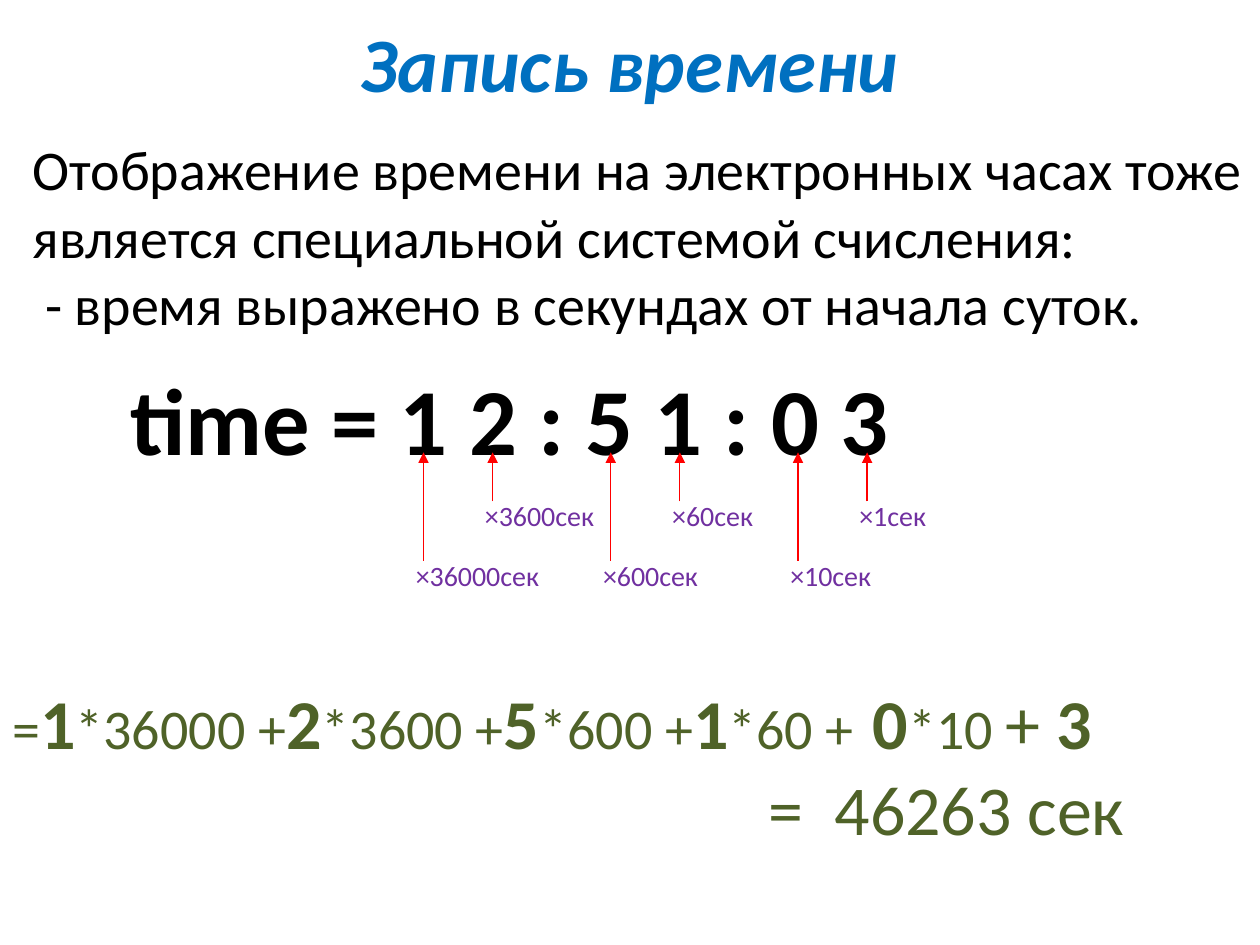
from lxml import etree
from pptx import Presentation
from pptx.dml.color import RGBColor
from pptx.enum.shapes import MSO_CONNECTOR
from pptx.enum.text import MSO_ANCHOR, PP_ALIGN
from pptx.oxml.ns import qn
from pptx.util import Pt

STRAIGHT = MSO_CONNECTOR.STRAIGHT
MIDDLE = MSO_ANCHOR.MIDDLE
CENTER = PP_ALIGN.CENTER

FONT = "Calibri"
BLUE = RGBColor(0x00, 0x70, 0xC0)
BLACK = RGBColor(0x00, 0x00, 0x00)
RED = RGBColor(0xFF, 0x00, 0x00)
PURPLE = RGBColor(0x70, 0x30, 0xA0)
GREEN = RGBColor(0x4F, 0x62, 0x28)

WEIGHTS = [
    ("×36000сек", 90),
    ("×3600сек", 84),
    ("×600сек", 73),
    ("×60сек", 62),
    ("×10сек", 62),
    ("×1сек", 56),
]
SUM_TERMS = [
    ("=", 32, False),
    ("1", 40, True), ("*36000 +", 32, False),
    ("2", 40, True), ("*3600 +", 32, False),
    ("5", 40, True), ("*600 +", 32, False),
    ("1", 40, True), ("*60 +", 32, False),
    (" ", 48, True), ("0", 40, True), ("*10 ", 32, False),
    ("+ ", 40, False), ("3", 40, True),
]


def style_run(run, size, color, bold=False, italic=False):
    """Give a run its font, size, colour and weight."""
    font = run.font
    font.name = FONT
    font.size = Pt(size)
    font.color.rgb = color
    font.bold = bold
    font.italic = italic


def add_text(slide, box, text, size, color, bold=False, italic=False, wrap=True):
    """Place a text box in the given box and return its frame."""
    frame = slide.shapes.add_textbox(*map(Pt, box)).text_frame
    frame.word_wrap = wrap
    frame.text = text
    for paragraph in frame.paragraphs:
        for run in paragraph.runs:
            style_run(run, size, color, bold, italic)
    return frame


def add_arrow(slide, x, bottom, top):
    """Draw a thin red arrow upwards from bottom to top."""
    arrow = slide.shapes.add_connector(STRAIGHT, Pt(x), Pt(bottom), Pt(x), Pt(top))
    arrow.line.color.rgb = RED
    arrow.line.width = Pt(0.75)
    tip = etree.SubElement(arrow.line._get_or_add_ln(), qn("a:tailEnd"))
    tip.set("type", "triangle")
    etree.SubElement(arrow._element.spPr, qn("a:effectLst"))


def add_title(slide, box):
    """Place the centred slide title."""
    frame = add_text(slide, box, "Запись времени", 44, BLUE, True, True)
    frame.vertical_anchor = MIDDLE
    frame.paragraphs[0].alignment = CENTER


def add_explanation(slide, box):
    """Place the two introductory paragraphs."""
    add_text(slide, box,
             "Отображение времени на электронных часах тоже является "
             "специальной системой счисления:\n"
             " - время выражено в секундах от начала суток.", 32, BLACK)


def add_clock(slide, box):
    """Place the clock reading with an arrow and a weight under each digit."""
    left, top = box[:2]
    add_text(slide, box, "time = 1 2 : 5 1 : 0 3", 54, BLACK, True)
    for index, (weight, width) in enumerate(WEIGHTS):
        pair, is_unit = divmod(index, 2)
        x = left + 174.5 + 107 * pair + 39.5 * is_unit
        arrow_bottom = top + (84 if is_unit else 118)
        add_arrow(slide, x, arrow_bottom, top + 56)
        label_box = (x - 11.5, arrow_bottom - 5, width, 26.5)
        add_text(slide, label_box, weight, 16, PURPLE, wrap=False)


def add_sum(slide, box):
    """Place the expanded sum and, indented below it, the result."""
    frame = add_text(slide, box, "", 40, GREEN)
    terms = frame.paragraphs[0]
    for term, size, bold in SUM_TERMS:
        run = terms.add_run()
        run.text = term
        style_run(run, size, GREEN, bold)
    result = frame.add_paragraph()
    result.text = "=  46263 сек"
    result._p.get_or_add_pPr().set("marL", str(Pt(432)))
    style_run(result.runs[0], 40, GREEN)


def main():
    """Build and save the slide."""
    deck = Presentation()
    deck.slide_width, deck.slide_height = Pt(720), Pt(540)
    slide = deck.slides.add_slide(deck.slide_layouts[6])
    add_title(slide, (0, 0, 720, 71))
    add_explanation(slide, (11.5, 73.5, 708.5, 124))
    add_clock(slide, (67.5, 202.5, 456, 72.5))
    add_sum(slide, (0, 376.5, 720, 114))
    deck.save("out.pptx")


if __name__ == "__main__":
    main()
